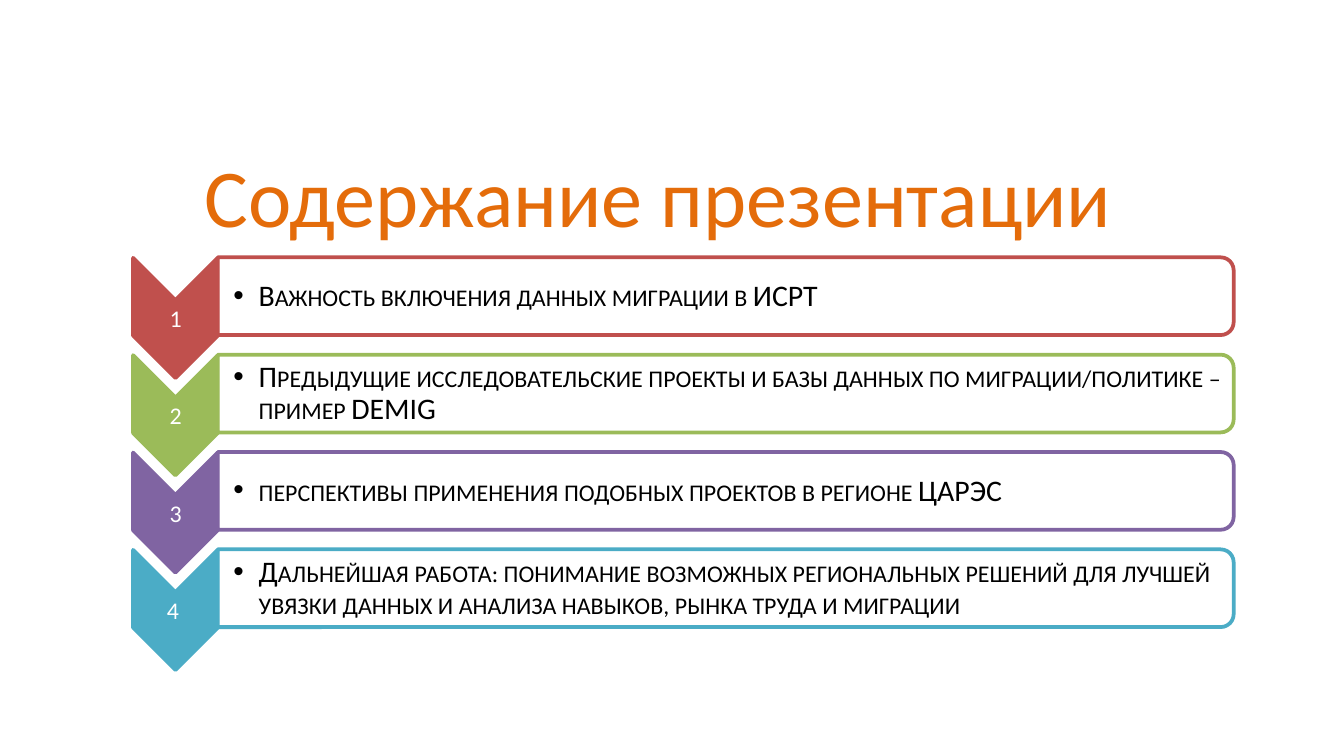
"""Build the contents slide with four numbered chevron rows."""
import lxml.etree
import pptx
import pptx.dml.color
import pptx.enum.shapes
import pptx.enum.text
import pptx.oxml.ns
import pptx.util

Cm = pptx.util.Cm
Pt = pptx.util.Pt
qn = pptx.oxml.ns.qn
RGB = pptx.dml.color.RGBColor.from_string
MSO_SHAPE = pptx.enum.shapes.MSO_SHAPE
PP_ALIGN = pptx.enum.text.PP_ALIGN

COLORS = {
    "title": "E46C0A", "white": "FFFFFF", "black": "000000",
    "red": "C0504D", "green": "9BBB59", "purple": "8064A2", "teal": "4BACC6",
}
ROWS = [
    ("1", "red", "Важность включения данных миграции в ИСРТ"),
    ("2", "green", "Предыдущие исследовательские проекты и базы данных по миграции/политике – пример DEMIG"),
    ("3", "purple", "перспективы применения подобных проектов в регионе ЦАРЭС"),
    ("4 ", "teal", "Дальнейшая работа: понимание возможных региональных решений для лучшей "
                   "увязки данных и анализа навыков, рынка труда и миграции"),
]
PITCH = 1.84


def add_rotated(shape_type, box, fill, line):
    sp = s.shapes.add_shape(shape_type, *[Cm(v) for v in box])
    sp.rotation = 90
    sp.shadow.inherit = False
    sp.fill.solid()
    sp.fill.fore_color.rgb = RGB(COLORS[fill])
    sp.line.color.rgb = RGB(COLORS[line])
    sp.line.width = Pt(2)
    return sp


def add_text(box, text, size, color, margins=None, small=True):
    tf = s.shapes.add_textbox(*[Cm(v) for v in box]).text_frame
    tf.word_wrap = True
    tf.vertical_anchor = pptx.enum.text.MSO_ANCHOR.MIDDLE
    if margins:
        tf.margin_left, tf.margin_top, tf.margin_right, tf.margin_bottom = [Cm(v) for v in margins]
    p = tf.paragraphs[0]
    r = p.add_run()
    r.text = text
    r.font.name = "Calibri"
    r.font.size = Pt(size)
    r.font.color.rgb = RGB(COLORS[color])
    if small:
        p.line_spacing = 0.9
        r.font._element.set("cap", "small")
    return p


prs = pptx.Presentation()
prs.slide_width = Cm(25.4)
prs.slide_height = Cm(14.29)
s = prs.slides.add_slide(prs.slide_layouts[6])

p = add_text((1.02, 2.49, 22.86, 2.39), "Содержание презентации", 44, "title", small=False)
p.alignment = PP_ALIGN.CENTER

for i, (number, color, text) in enumerate(ROWS):
    dy = i * PITCH
    add_rotated(MSO_SHAPE.CHEVRON, (2.18, 5.21 + dy, 2.27, 1.6), color, color)
    p = add_text((2.52, 5.66 + dy, 1.6, 0.69), number, 16, "white", (0.03, 0.03, 0.03, 0.03))
    p.alignment = PP_ALIGN.CENTER

    sp = add_rotated(MSO_SHAPE.ROUND_2_SAME_RECTANGLE, (12.98, -4 + dy, 1.47, 19.2), "white", color)
    clr = sp._element.spPr.find(qn("a:solidFill"))[0]
    lxml.etree.SubElement(clr, qn("a:alpha")).set("val", "90000")

    p = add_text((4.11, 4.95 + dy, 19.13, 1.32), text, 16, "black", (0.3, 0.03, 0.03, 0.03))
    pPr = p._p.get_or_add_pPr()
    pPr.set("marL", str(Cm(0.48)))
    pPr.set("indent", str(-Cm(0.48)))
    lxml.etree.SubElement(pPr, qn("a:buFont")).set("typeface", "Arial")
    lxml.etree.SubElement(pPr, qn("a:buChar")).set("char", "•")

prs.save("out.pptx")
